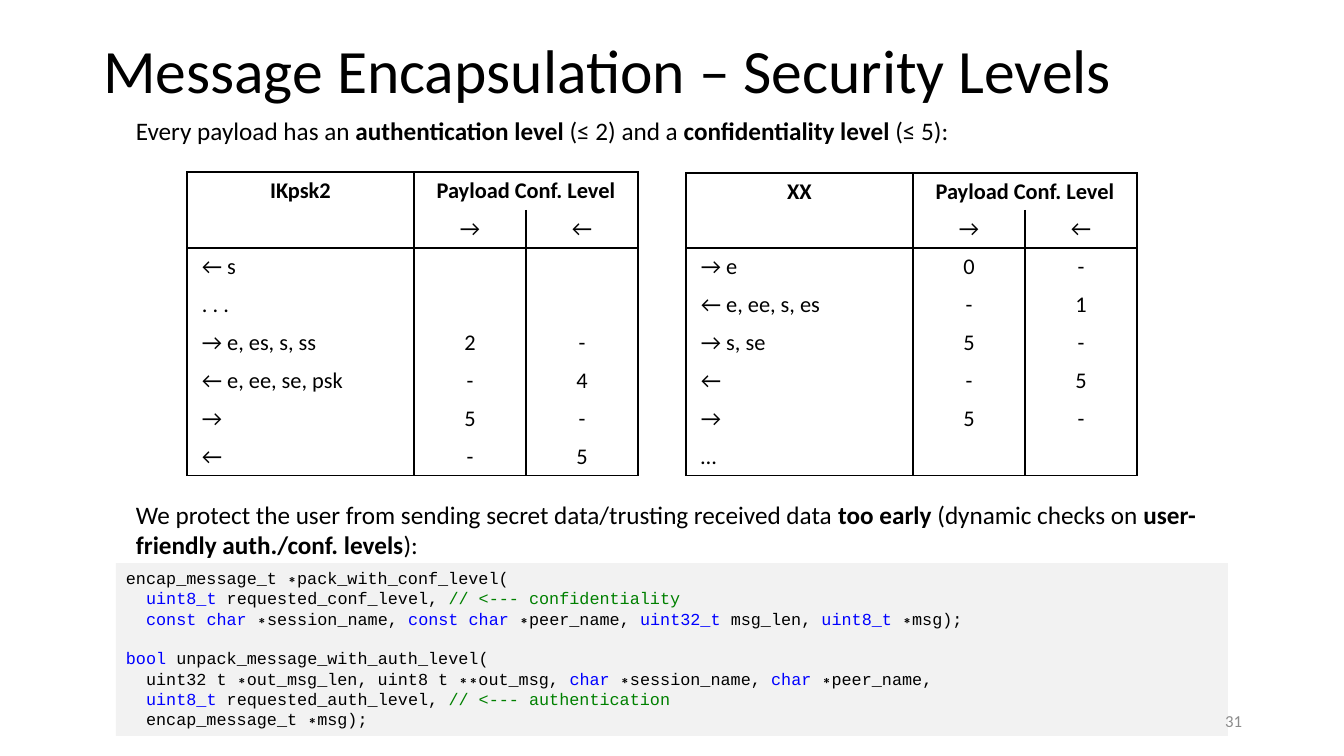
from pptx import Presentation
from pptx.dml.color import RGBColor
from pptx.enum.shapes import MSO_SHAPE
from pptx.enum.text import MSO_ANCHOR, MSO_AUTO_SIZE, PP_ALIGN
from pptx.util import Emu, Pt
from lxml.etree import SubElement
from pptx.oxml.ns import qn

COLORS = {"text": "000000", "bold": "000000", "type": "0000FF",
          "note": "008000", "panel": "F2F2F2", "page": "8C8C8C"}
SCALE = 914400 / 100.8


def px(*nums):
    return [Emu(round(n * SCALE)) for n in nums]


def write(para, runs, size, face="Calibri"):
    for text, style in runs:
        run = para.add_run()
        run.text = text
        run.font.size = Pt(size)
        run.font.name = face
        run.font.bold = style == "bold"
        run.font.color.rgb = RGBColor.from_string(COLORS[style])


prs = Presentation()
prs.slide_width, prs.slide_height = px(1344, 756)
slide = prs.slides.add_slide(prs.slide_layouts[5])
shapes = slide.shapes

# Title
title = shapes.title
title.left, title.top, title.width, title.height = px(93, 1, 1159, 146)
frame = title.text_frame
frame.auto_size = MSO_AUTO_SIZE.NONE
frame.vertical_anchor = MSO_ANCHOR.MIDDLE
para = frame.paragraphs[0]
para.alignment = PP_ALIGN.LEFT
para.line_spacing = 0.9
write(para, [("Message Encapsulation – Security Levels", "text")], 44)

# Code panel
panel = shapes.add_shape(MSO_SHAPE.RECTANGLE, *px(116, 563, 1112, 173))
panel.shadow.inherit = False
panel.fill.solid()
panel.fill.fore_color.rgb = RGBColor.from_string(COLORS["panel"])
panel.line.fill.background()
frame = panel.text_frame
frame.word_wrap = True
frame.vertical_anchor = MSO_ANCHOR.TOP
code = [
    [("encap_message_t ∗pack_with_conf_level(", "text")],
    [("  ", "text"), ("uint8_t ", "type"), ("requested_conf_level, ", "text"),
     ("// <--- confidentiality", "note")],
    [("  ", "text"), ("const char", "type"), (" ∗session_name, ", "text"),
     ("const char", "type"), (" ∗peer_name, ", "text"),
     ("uint32_t ", "type"), ("msg_len, ", "text"),
     ("uint8_t", "type"), (" ∗msg);", "text")],
    [("bool ", "type"), ("unpack_message_with_auth_level(", "text")],
    [("  uint32 t ∗out_msg_len, uint8 t ∗∗out_msg, ", "text"),
     ("char", "type"), (" ∗session_name, ", "text"),
     ("char", "type"), (" ∗peer_name,", "text")],
    [("  ", "text"), ("uint8_t ", "type"), ("requested_auth_level, ", "text"),
     ("// <--- authentication", "note")],
    [("  encap_message_t ∗msg);", "text")],
]
for i, line in enumerate(code):
    para = frame.paragraphs[0] if i == 0 else frame.add_paragraph()
    para.alignment = PP_ALIGN.LEFT
    if line[0][0] == "bool ":
        para.space_before = Pt(14)
    write(para, line, 12, "Courier New")

# Body text and page number
notes = [
    ((126, 110, 1098, 40), 18, PP_ALIGN.LEFT, MSO_ANCHOR.TOP,
     [("Every payload has an ", "text"), ("authentication level ", "bold"),
      ("(≤ 2) and a ", "text"), ("confidentiality level", "bold"),
      (" (≤ 5):", "text")]),
    ((126, 494, 1084, 71), 18, PP_ALIGN.LEFT, MSO_ANCHOR.TOP,
     [("We protect the user from sending secret data/trusting received data ",
       "text"), ("too early", "bold"), (" (dynamic checks on ", "text"),
      ("user-friendly auth./conf. levels", "bold"), ("):", "text")]),
    ((950, 701, 302, 40), 12, PP_ALIGN.RIGHT, MSO_ANCHOR.MIDDLE,
     [("31", "page")]),
]
for area, size, align, anchor, runs in notes:
    frame = shapes.add_textbox(*px(*area)).text_frame
    frame.word_wrap = True
    frame.vertical_anchor = anchor
    frame.paragraphs[0].alignment = align
    write(frame.paragraphs[0], runs, size)

# Security level tables
tables = [
    (187, 172, 38, [
        ("IKpsk2", "Payload Conf. Level", ""), ("", "→", "←"),
        ("← s", "", ""), (". . .", "", ""),
        ("→ e, es, s, ss", "2", "-"), ("← e, ee, se, psk", "-", "4"),
        ("→", "5", "-"), ("←", "-", "5")]),
    (686, 173, 37, [
        ("XX", "Payload Conf. Level", ""), ("", "→", "←"),
        ("→ e", "0", "-"), ("← e, ee, s, es", "-", "1"),
        ("→ s, se", "5", "-"), ("←", "-", "5"),
        ("→", "5", "-"), ("…", "", "")]),
]
for left, top, head, rows in tables:
    area = px(left, top, 451, head + 7 * 38)
    table = shapes.add_table(len(rows), 3, *area).table
    table.first_row = table.horz_banding = False
    for col, width in zip(table.columns, px(227, 112, 112)):
        col.width = width
    for r, row in enumerate(rows):
        table.rows[r].height = px(38 if r else head)[0]
        for c, text in enumerate(row):
            cell = table.cell(r, c)
            cell.margin_left = px(10 if c or r < 2 else 15)[0]
            para = cell.text_frame.paragraphs[0]
            para.alignment = PP_ALIGN.CENTER if c or r < 2 else PP_ALIGN.LEFT
            if text:
                write(para, [(text, "text" if r else "bold")], 16)
            else:
                SubElement(para._p, qn("a:endParaRPr"), sz="1600")

            # Column rules everywhere, row rules around header and body
            props = cell._tc.get_or_add_tcPr()
            sides = {"L": True, "R": True, "T": r in (0, 2), "B": r in (1, 7)}
            for side, shown in sides.items():
                edge = SubElement(props, qn("a:ln" + side), w="12700")
                if shown:
                    fill = SubElement(edge, qn("a:solidFill"))
                    SubElement(fill, qn("a:srgbClr"), val=COLORS["text"])
                else:
                    SubElement(edge, qn("a:noFill"))
            cell.fill.background()
    table.cell(0, 1).merge(table.cell(0, 2))

prs.save("out.pptx")
